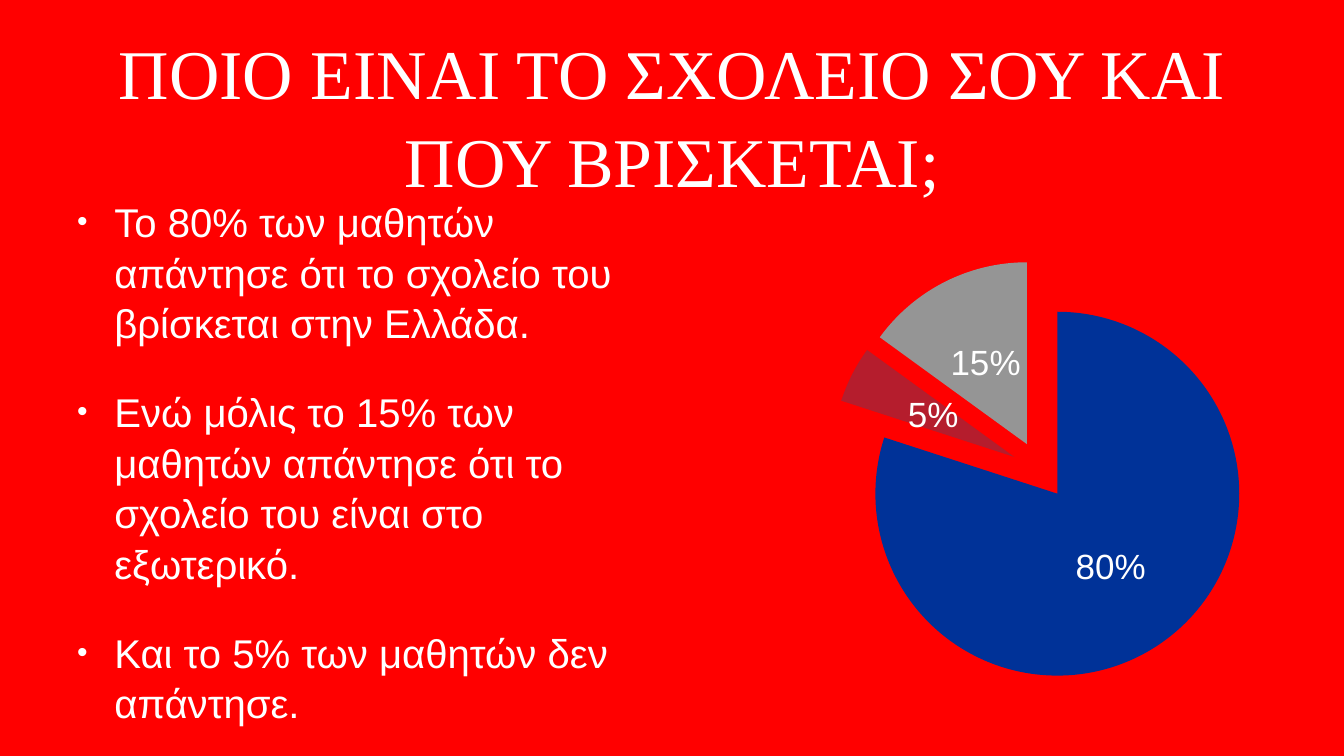
from dataclasses import dataclass

from lxml.etree import SubElement
from pptx import Presentation
from pptx.chart.data import CategoryChartData
from pptx.dml.color import RGBColor
from pptx.enum.chart import XL_CHART_TYPE, XL_LABEL_POSITION
from pptx.enum.text import MSO_ANCHOR, PP_ALIGN
from pptx.oxml.ns import qn
from pptx.slide import Slide
from pptx.util import Pt

COLORS = {
    "background": "FF0000",
    "text": "FFFFFF",
    "greece": "003298",
    "no_answer": "B51D2D",
    "abroad": "959595",
}
QUESTION = "ΠΟΙΟ ΕΙΝΑΙ ΤΟ ΣΧΟΛΕΙΟ ΣΟΥ ΚΑΙ ΠΟΥ ΒΡΙΣΚΕΤΑΙ;"
FINDINGS = [
    "Το 80% των μαθητών απάντησε ότι το σχολείο του βρίσκεται στην Ελλάδα.",
    "Ενώ μόλις το 15% των μαθητών απάντησε ότι το σχολείο του είναι στο εξωτερικό.",
    "Και το 5% των μαθητών δεν απάντησε.",
]
SHARES = [80, None, None, None, 5, 15]
SLICE_COLORS = {0: "greece", 4: "no_answer", 5: "abroad"}
EXPLOSION = 16
BULLET_INDENT = Pt(53.3)


@dataclass
class Area:
    left: float
    top: float
    width: float
    height: float

    def lengths(self) -> list[int]:
        return [Pt(v) for v in (self.left, self.top, self.width, self.height)]


@dataclass
class TextBlock:
    area: Area
    paragraphs: list[str]
    font_name: str
    size: float
    align: PP_ALIGN
    gap: float = 0
    bulleted: bool = False


def color(name: str) -> RGBColor:
    return RGBColor.from_string(COLORS[name])


def style_font(font, name: str, size: float) -> None:
    for attribute, value in {"name": name, "size": Pt(size)}.items():
        setattr(font, attribute, value)
    font.color.rgb = color("text")


def add_bullet(paragraph) -> None:
    """Give the paragraph a hanging indent and a three-quarter-size bullet."""
    properties = paragraph._p.get_or_add_pPr()
    properties.set("marL", str(BULLET_INDENT))
    properties.set("indent", str(-BULLET_INDENT))
    SubElement(properties, qn("a:buSzPct"), val="75000")
    SubElement(properties, qn("a:buFont"), typeface="Arial")
    SubElement(properties, qn("a:buChar"), char="•")


def add_text(slide: Slide, block: TextBlock) -> None:
    frame = slide.shapes.add_textbox(*block.area.lengths()).text_frame
    frame_format = {"word_wrap": True, "vertical_anchor": MSO_ANCHOR.MIDDLE}
    frame_format |= {f"margin_{side}": Pt(4.3) for side in ("left", "top", "right", "bottom")}
    for attribute, value in frame_format.items():
        setattr(frame, attribute, value)

    for index, wording in enumerate(block.paragraphs):
        paragraph = frame.add_paragraph() if index else frame.paragraphs[0]
        if block.bulleted:
            add_bullet(paragraph)
        paragraph_format = {
            "alignment": block.align,
            "line_spacing": 1.05,
            "space_before": Pt(block.gap if index else 0),
        }
        for attribute, value in paragraph_format.items():
            setattr(paragraph, attribute, value)
        run = paragraph.add_run()
        run.text = wording
        style_font(run.font, block.font_name, block.size)


def fill_plot_area(chart) -> None:
    """Stretch the inner plot area over the whole chart frame."""
    plot_area = chart._chartSpace.chart.plotArea
    layout = plot_area.find(qn("c:layout"))
    if layout is None:
        layout = SubElement(plot_area, qn("c:layout"))
        plot_area.insert(0, layout)
    manual = SubElement(layout, qn("c:manualLayout"))
    settings = {
        "layoutTarget": "inner", "xMode": "edge", "yMode": "edge",
        "x": "0.005", "y": "0.005", "w": "0.99", "h": "0.99",
    }
    for tag, value in settings.items():
        SubElement(manual, qn(f"c:{tag}"), val=value)


def add_answer_pie(slide: Slide, area: Area) -> None:
    answers = CategoryChartData()
    answers.categories = [str(n) for n in range(1, len(SHARES) + 1)]
    answers.add_series("Series 1", SHARES)
    chart = slide.shapes.add_chart(XL_CHART_TYPE.PIE, *area.lengths(), answers).chart
    chart.has_legend = False
    chart.has_title = False
    style_font(chart.font, "Arial", 10)
    fill_plot_area(chart)

    plot = chart.plots[0]
    plot.vary_by_categories = True
    series = plot.series[0]
    for index, name in SLICE_COLORS.items():
        slice_format = series.points[index].format
        slice_format.fill.solid()
        slice_format.fill.fore_color.rgb = color(name)
        slice_format.line.fill.background()

    first_point = series._element.find(qn("c:dPt"))
    explosion = SubElement(series._element, qn("c:explosion"), val=str(EXPLOSION))
    first_point.addprevious(explosion)

    labels = series.data_labels
    label_format = {
        "show_percentage": True,
        "show_value": False,
        "number_format": "#,##0%",
        "number_format_is_linked": False,
        "position": XL_LABEL_POSITION.CENTER,
    }
    for attribute, value in label_format.items():
        setattr(labels, attribute, value)
    style_font(labels.font, "Arial", 50)


def main() -> None:
    presentation = Presentation()
    presentation.slide_width = Pt(1920)
    presentation.slide_height = Pt(1080)
    slide = presentation.slides.add_slide(presentation.slide_layouts[6])
    slide.background.fill.solid()
    slide.background.fill.fore_color.rgb = color("background")

    blocks = [
        TextBlock(Area(141, 44.6, 1638.7, 234.7), [QUESTION],
                  "Times New Roman", 99.7, PP_ALIGN.CENTER),
        TextBlock(Area(105.8, 289.4, 826.6, 738), FINDINGS,
                  "Arial", 57.3, PP_ALIGN.LEFT, gap=55, bulleted=True),
    ]
    for block in blocks:
        add_text(slide, block)
    add_answer_pie(slide, Area(1181.5, 347, 609.1, 649.4))
    presentation.save("out.pptx")


if __name__ == "__main__":
    main()
